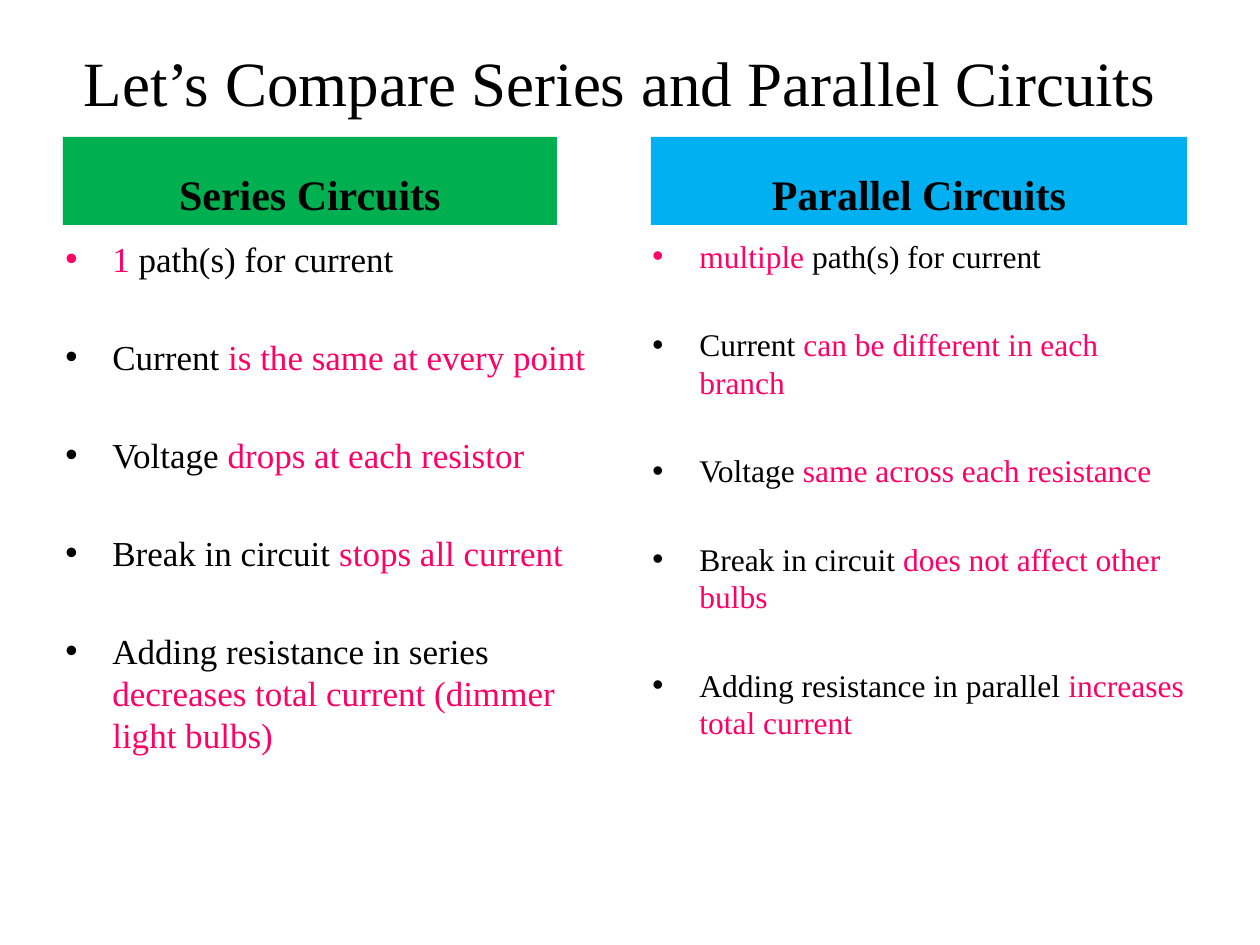
from dataclasses import dataclass

from lxml.etree import SubElement
from pptx import Presentation
from pptx.dml.color import RGBColor
from pptx.enum.shapes import MSO_SHAPE as Shape
from pptx.enum.text import MSO_ANCHOR as Anchor, PP_ALIGN as Align
from pptx.oxml.ns import qn
from pptx.slide import Slide
from pptx.util import Emu, Pt

PX_PER_INCH = 126
BLACK, PINK = "000000", "FF0066"


def px(length):
    return Emu(round(length * 914400 / PX_PER_INCH))


def color(hex_string):
    return RGBColor.from_string(hex_string)


@dataclass
class SlideBuilder:
    slide: Slide
    font: str = "Times New Roman"
    indent: int = 47

    def add_run(self, paragraph, text, size, hex_string=BLACK, bold=False):
        run = paragraph.add_run()
        run.text = text
        run.font.name = self.font
        run.font.size = Pt(size)
        run.font.bold = bold
        run.font.color.rgb = color(hex_string)

    def add_text_box(self, box):
        frame = self.slide.shapes.add_textbox(*map(px, box)).text_frame
        frame.word_wrap = True
        return frame

    def add_title(self, box, text):
        frame = self.add_text_box(box)
        frame.vertical_anchor = Anchor.MIDDLE
        paragraph = frame.paragraphs[0]
        paragraph.alignment = Align.CENTER
        self.add_run(paragraph, text, 36)

    def add_heading(self, box, text, fill):
        shape = self.slide.shapes.add_shape(Shape.RECTANGLE, *map(px, box))
        shape.shadow.inherit = False
        shape.fill.solid()
        shape.fill.fore_color.rgb = color(fill)
        shape.line.fill.background()
        frame = shape.text_frame
        frame.word_wrap = True
        frame.vertical_anchor = Anchor.BOTTOM
        paragraph = frame.paragraphs[0]
        paragraph.alignment = Align.CENTER
        self.add_run(paragraph, text, 24, bold=True)

    def set_bullet(self, paragraph):
        properties = paragraph._p.get_or_add_pPr()
        properties.set("marL", str(px(self.indent)))
        properties.set("indent", str(-px(self.indent)))
        SubElement(properties, qn("a:buFont"), typeface="Arial")
        SubElement(properties, qn("a:buChar"), char="•")

    def add_bullets(self, box, items, size):
        """Each item is a list of (text, color) runs; an open line separates items."""
        frame = self.add_text_box(box)
        for index, runs in enumerate(items):
            paragraph = frame.add_paragraph() if index else frame.paragraphs[0]
            paragraph.space_before = Pt(size * (1.6 if index else 0.2))
            self.set_bullet(paragraph)
            for text, hex_string in runs:
                self.add_run(paragraph, text, size, hex_string)


def main():
    presentation = Presentation()
    presentation.slide_width, presentation.slide_height = px(1260), px(945)
    builder = SlideBuilder(presentation.slides.add_slide(presentation.slide_layouts[6]))

    builder.add_title((53, 21, 1134, 120), "Let’s Compare Series and Parallel Circuits")

    builder.add_heading((63, 137, 494, 88), "Series Circuits", "00B050")
    builder.add_bullets((53, 231, 557, 683), [
        [("1 ", PINK), ("path(s) for current", BLACK)],
        [("Current ", BLACK), ("is the same at every point", PINK)],
        [("Voltage ", BLACK), ("drops at each resistor", PINK)],
        [("Break in circuit ", BLACK), ("stops all current", PINK)],
        [("Adding resistance in series ", BLACK),
         ("decreases total current (dimmer light bulbs)", PINK)],
    ], 20)

    builder.add_heading((651, 137, 536, 88), "Parallel Circuits", "00B0F0")
    builder.add_bullets((640, 231, 557, 544), [
        [("multiple", PINK), (" path(s) for current", BLACK)],
        [("Current ", BLACK), ("can be different in each branch", PINK)],
        [("Voltage ", BLACK), ("same across each resistance", PINK)],
        [("Break in circuit ", BLACK), ("does not affect other bulbs", PINK)],
        [("Adding resistance in parallel ", BLACK), ("increases total current", PINK)],
    ], 18)

    presentation.save("out.pptx")


if __name__ == "__main__":
    main()
